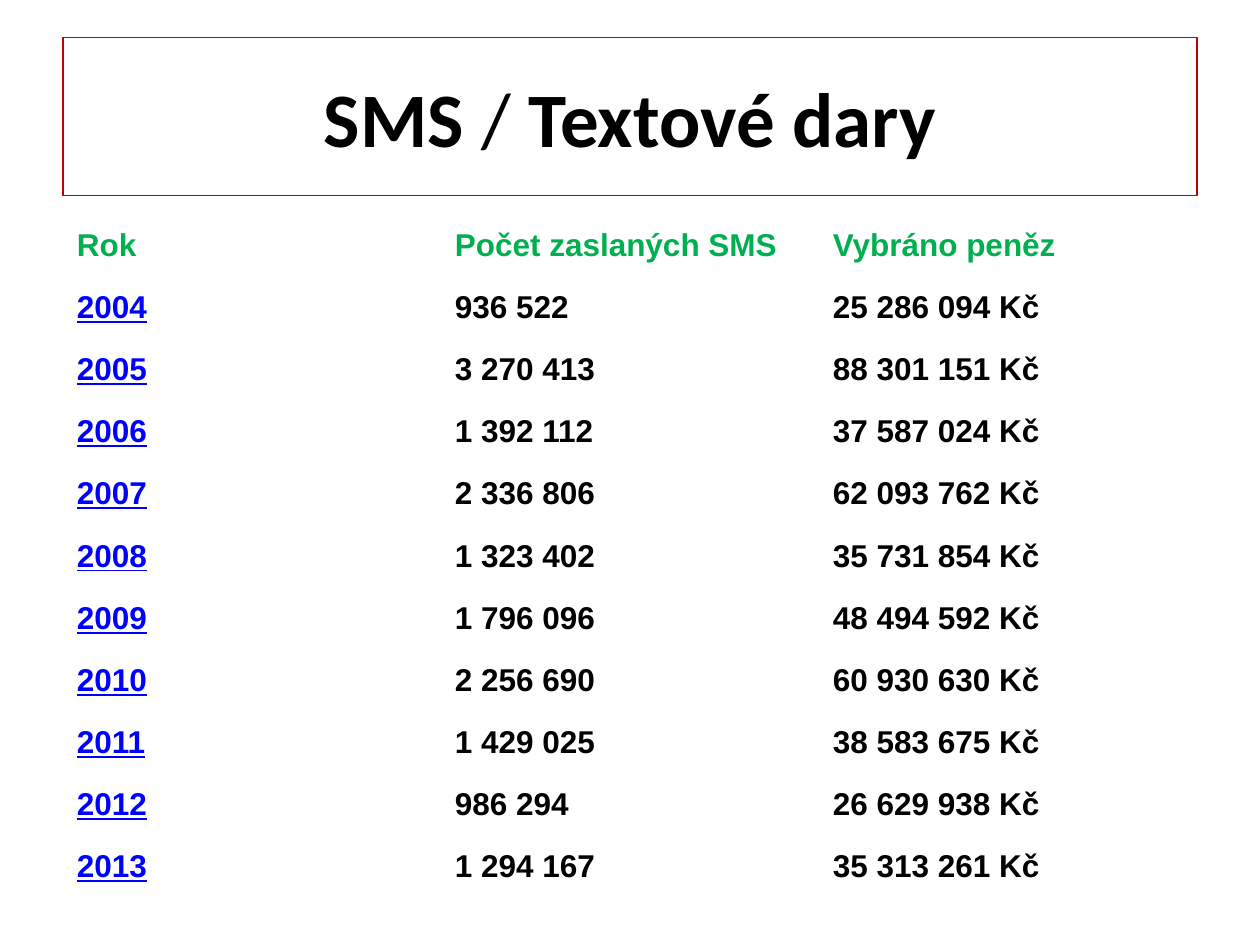
from dataclasses import dataclass

from pptx import Presentation
from pptx import util as u
from pptx.dml.color import RGBColor
from pptx.enum import text


@dataclass(frozen=True)
class Theme:
    black: str = "000000"
    border: str = "C00000"
    header: str = "00B050"
    year: str = "0000FF"
    title_font: str = "Calibri"
    body_font: str = "Arial"
    title_size: int = 44
    body_size: int = 18


HEADERS = ("Rok", "Počet zaslaných SMS", "Vybráno peněz")
DONATIONS = (
    ("2004", "936 522", "25 286 094 Kč"),
    ("2005", "3 270 413", "88 301 151 Kč"),
    ("2006", "1 392 112", "37 587 024 Kč"),
    ("2007", "2 336 806", "62 093 762 Kč"),
    ("2008", "1 323 402", "35 731 854 Kč"),
    ("2009", "1 796 096", "48 494 592 Kč"),
    ("2010", "2 256 690", "60 930 630 Kč"),
    ("2011", "1 429 025", "38 583 675 Kč"),
    ("2012", "986 294", "26 629 938 Kč"),
    ("2013", "1 294 167", "35 313 261 Kč"),
)


class SlideBuilder:
    def __init__(self, prs, theme):
        self.theme = theme
        self.s = prs.slides.add_slide(prs.slide_layouts[5])

    def run(self, p, content, color, **fmt):
        r = p.add_run()
        r.text = content
        for name, value in fmt.items():
            setattr(r.font, name, value)
        r.font.color.rgb = RGBColor.from_string(color)

    def title(self, parts, left, top, width, height):
        """Fill the title from (text, bold) pairs and frame it."""
        t = self.theme
        sp = self.s.shapes.title
        box = dict(left=left, top=top, width=width, height=height)
        for name, value in box.items():
            setattr(sp, name, u.Inches(value))
        sp.line.color.rgb = RGBColor.from_string(t.border)
        sp.line.width = u.Pt(0.75)
        tf = sp.text_frame
        tf.vertical_anchor = text.MSO_ANCHOR.MIDDLE
        p = tf.paragraphs[0]
        p.alignment = text.PP_ALIGN.CENTER
        for content, bold in parts:
            self.run(p, content, t.black, name=t.title_font,
                     size=u.Pt(t.title_size), bold=bold)

    def cell_format(self, row, col):
        """Return the colour and underline for a cell's place in the table."""
        if row == 0:
            return self.theme.header, False
        if col == 0:
            return self.theme.year, True
        return self.theme.black, False

    def table(self, rows, left, top, width, height):
        t = self.theme
        frame = self.s.shapes.add_table(
            len(rows), len(rows[0]), u.Inches(left), u.Inches(top),
            u.Inches(width), u.Inches(height))
        table = frame.table
        table.first_row = table.horz_banding = False
        for i, values in enumerate(rows):
            for j, value in enumerate(values):
                cell = table.cell(i, j)
                cell.fill.background()
                cell.vertical_anchor = text.MSO_ANCHOR.MIDDLE
                color, underline = self.cell_format(i, j)
                self.run(cell.text_frame.paragraphs[0], value, color,
                         name=t.body_font, size=u.Pt(t.body_size),
                         bold=True, underline=underline)


def main():
    prs = Presentation()
    prs.slide_width, prs.slide_height = u.Inches(10), u.Inches(7.5)
    slide = SlideBuilder(prs, Theme())
    slide.title((("SMS", True), (" / ", False), ("Textové dary", True)),
                0.5, 0.3, 9, 1.25)
    slide.table((HEADERS, *DONATIONS), 0.51, 1.7, 9, 5.43)
    prs.save("out.pptx")


if __name__ == "__main__":
    main()
